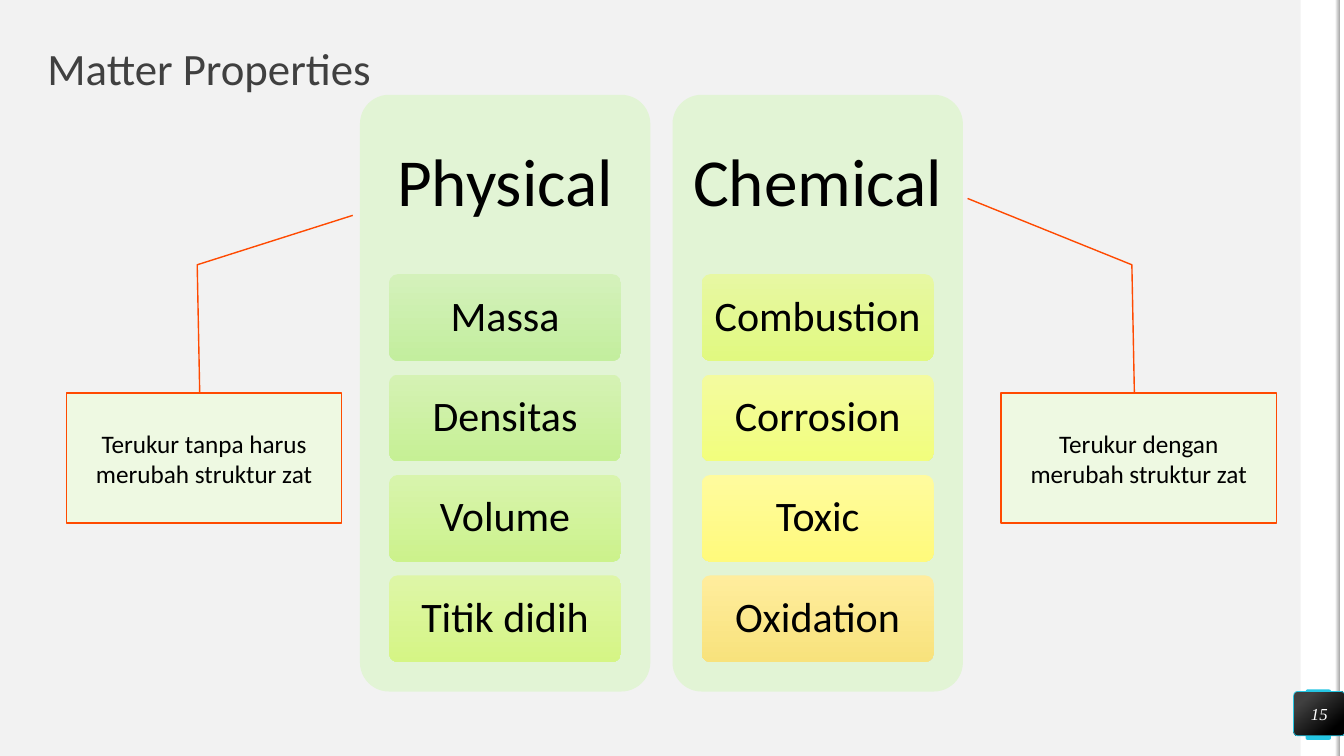
from dataclasses import dataclass

from pptx import Presentation
from pptx.dml.color import RGBColor
from pptx.enum.shapes import MSO_SHAPE
from pptx.enum.text import MSO_ANCHOR, PP_ALIGN
from pptx.util import Inches, Pt


@dataclass(frozen=True)
class Theme:
    """Colours, fonts and type sizes of the slide."""
    back: str = "F2F2F2"
    white: str = "FFFFFF"
    black: str = "000000"
    title: str = "404040"
    shade: str = "A6A6A6"
    panel: str = "E2F4D5"
    note: str = "EEF9E2"
    edge: str = "FF4A01"
    cyan: str = "25C6E3"
    font: str = "Calibri"
    serif: str = "Times New Roman"
    big: int = 48
    head: int = 32
    item: int = 30
    small: int = 18
    tiny: int = 12


THEME = Theme()
COLUMNS = [
    ("Physical", [("Massa", "D4F1BB", "C3EE9E"), ("Densitas", "D5F2B4", "C6F095"),
                  ("Volume", "D8F4AD", "CCF28C"), ("Titik didih", "DEF6A7", "D5F585")]),
    ("Chemical", [("Combustion", "E7F8A3", "E1F980"), ("Corrosion", "F3FB9F", "F2FE7D"),
                  ("Toxic", "FFFB9E", "FFFA7C"), ("Oxidation", "FFED9D", "F8E27C")]),
]
NOTES = [
    ("Terukur tanpa harus merubah struktur zat", 0.66, (-1.367, 1.04)),
    ("Terukur dengan merubah struktur zat", 9.93, (-1.497, -0.122)),
]


def rgb(code):
    """Turn a hex code into a colour."""
    return RGBColor.from_string(code)


def write(shape, text, size, color=THEME.black, font=THEME.font,
          align=PP_ALIGN.CENTER, inset=0.0, space=0.9, slant=False):
    """Set and format the text of a shape."""
    frame = shape.text_frame
    frame.text = text
    frame.word_wrap = True
    frame.vertical_anchor = MSO_ANCHOR.MIDDLE
    frame.margin_left = frame.margin_right = Inches(inset)
    frame.margin_top = frame.margin_bottom = Inches(inset / 2)
    para = frame.paragraphs[0]
    para.alignment = align
    para.line_spacing = space
    for run in para.runs:
        run.font.name = font
        run.font.size = Pt(size)
        run.font.italic = slant
        run.font.color.rgb = rgb(color)


def add_box(slide, kind, box, fill, edge=None, width=1, adjust=()):
    """Add a flat preset shape with a solid fill."""
    shape = slide.shapes.add_shape(kind, *map(Inches, box))
    shape.shadow.inherit = False
    shape.fill.solid()
    shape.fill.fore_color.rgb = rgb(fill)
    if edge:
        shape.line.color.rgb = rgb(edge)
        shape.line.width = Pt(width)
    else:
        shape.line.fill.background()
    for index, value in enumerate(adjust):
        shape.adjustments[index] = value
    return shape


def blend(shape, first, last, angle, ends=(0, 1)):
    """Fill a shape with a two-colour gradient."""
    shape.fill.gradient()
    shape.fill.gradient_angle = angle
    for stop, color, place in zip(shape.fill.gradient_stops, (first, last), ends):
        stop.color.rgb = rgb(color)
        stop.position = place


def add_frame(slide):
    """Draw the bars down the right edge."""
    add_box(slide, MSO_SHAPE.RECTANGLE, (12.9, 0, 0.39, 7.5), THEME.white)
    add_box(slide, MSO_SHAPE.ROUNDED_RECTANGLE, (12.95, 6.84, 0.25, 0.5),
            THEME.cyan, adjust=[0.074])
    add_box(slide, MSO_SHAPE.RECTANGLE, (13.28, 0, 0.05, 7.5), THEME.white)
    bar = add_box(slide, MSO_SHAPE.RECTANGLE, (13.24, 0, 0.05, 7.5), THEME.shade)
    blend(bar, THEME.white, THEME.shade, 0)


def add_title(slide, text):
    """Place the slide title."""
    title = slide.shapes.title
    title.left, title.top = Inches(0.47), Inches(0.47)
    title.width, title.height = Inches(5.98), Inches(0.47)
    write(title, text, THEME.head, THEME.title, align=PP_ALIGN.LEFT)


def add_column(slide, left, head, items):
    """Draw a panel with its heading and stacked items."""
    add_box(slide, MSO_SHAPE.ROUNDED_RECTANGLE, (left, 0.94, 2.88, 5.92),
            THEME.panel, adjust=[0.1])
    label = slide.shapes.add_textbox(*map(Inches, (left, 0.94, 2.88, 1.78)))
    write(label, head, THEME.big, inset=0.1)
    for row, (text, first, last) in enumerate(items):
        box = (left + 0.29, 2.72 + row * 0.996, 2.3, 0.86)
        tile = add_box(slide, MSO_SHAPE.ROUNDED_RECTANGLE, box, first, adjust=[0.1])
        blend(tile, first, last, 270)
        write(tile, text, THEME.item, inset=0.1)


def add_badge(slide, text):
    """Draw the page number badge."""
    badge = add_box(slide, MSO_SHAPE.ROUNDED_RECTANGLE, (12.83, 6.86, 0.51, 0.44),
                    THEME.black, THEME.cyan, 0.5, [0.095])
    blend(badge, THEME.title, THEME.black, 310, (0.2, 0.82))
    write(badge, text, THEME.tiny, THEME.white, THEME.serif, space=1, slant=True)


def add_note(slide, text, left, tip):
    """Draw a callout whose bent line ends at the tip."""
    note = add_box(slide, MSO_SHAPE.LINE_CALLOUT_2, (left, 3.9, 2.73, 1.29), THEME.note,
                   THEME.edge, adjust=(-0.003, 0.484, -0.987, 0.475, *tip))
    write(note, text, THEME.small, inset=0.1, space=1)


def main():
    """Build and save the slide."""
    deck = Presentation()
    deck.slide_width, deck.slide_height = Inches(13.33), Inches(7.5)
    slide = deck.slides.add_slide(deck.slide_layouts[5])
    slide.background.fill.solid()
    slide.background.fill.fore_color.rgb = rgb(THEME.back)
    add_frame(slide)
    add_title(slide, "Matter Properties")
    for index, (head, items) in enumerate(COLUMNS):
        add_column(slide, 3.57 + index * 3.1, head, items)
    add_badge(slide, "15")
    for text, left, tip in NOTES:
        add_note(slide, text, left, tip)
    deck.save("out.pptx")


if __name__ == "__main__":
    main()
